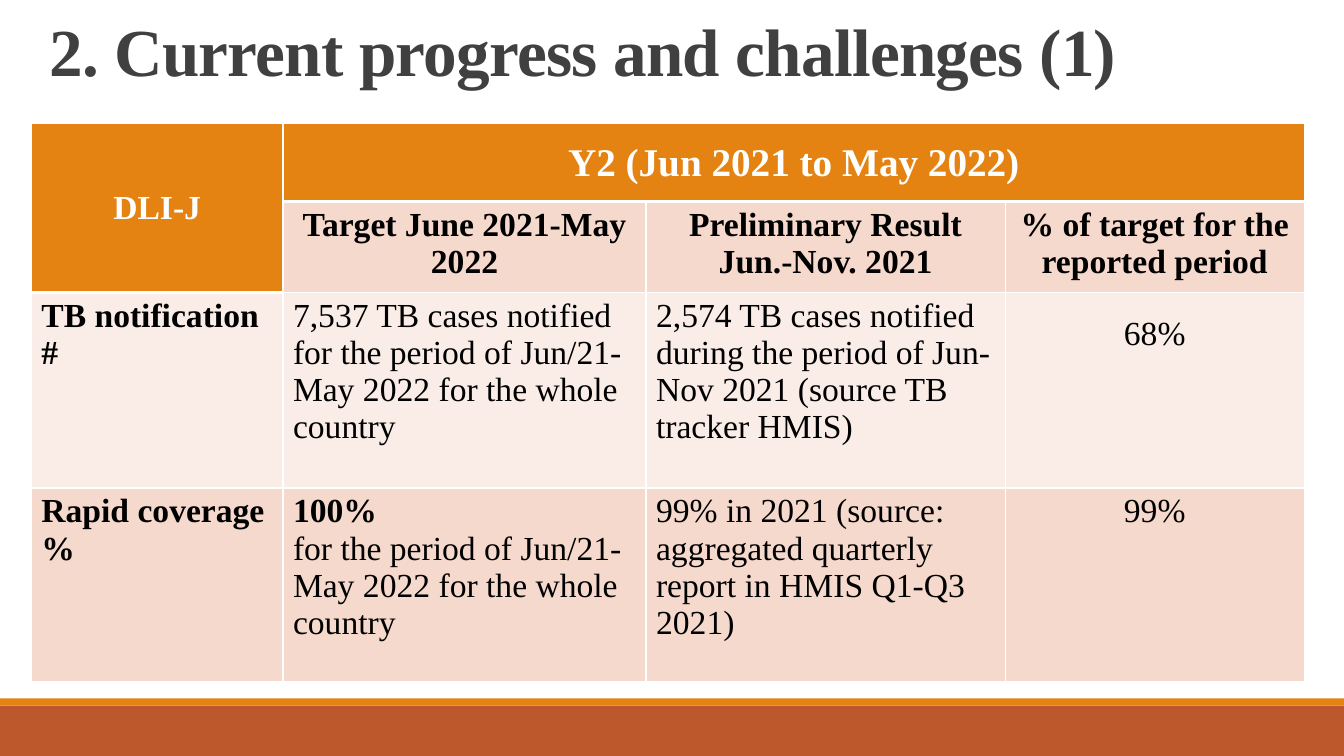
"""Build the slide on current progress and challenges with its results table."""
from lxml import etree
from pptx import Presentation
from pptx import util as u
from pptx.dml.color import RGBColor
from pptx.enum import shapes, text
from pptx.oxml import ns

ORANGE = RGBColor(0xE4, 0x83, 0x12)
RUST = RGBColor(0xBD, 0x58, 0x2C)
PEACH = RGBColor(0xF5, 0xD9, 0xCC)
PALE = RGBColor(0xFA, 0xED, 0xE7)
WHITE = RGBColor(0xFF, 0xFF, 0xFF)
BLACK = RGBColor(0, 0, 0)
GREY = RGBColor(0x40, 0x40, 0x40)
FONT = "Times New Roman"
COLUMN_WIDTHS = [6.34, 9.15, 9.05, 7.54]
ROW_HEIGHTS = [1.96, 1.45, 4.93, 4.88]
ROW_FILLS = [ORANGE, PEACH, PALE, PEACH]
ROWS = [
    ["DLI-J", "Y2 (Jun 2021 to May 2022)", "", ""],
    ["", "Target June 2021-May 2022", "Preliminary Result Jun.-Nov. 2021",
     "% of target for the reported period"],
    ["TB notification\n#",
     "7,537 TB cases notified for the period of Jun/21-May 2022 for the whole country",
     "2,574 TB cases notified during the period of Jun-Nov 2021 (source TB tracker HMIS)",
     "68%"],
    ["Rapid coverage %",
     "100%\nfor the period of Jun/21-May 2022 for the whole country",
     "99% in 2021 (source: aggregated quarterly report in HMIS Q1-Q3 2021)",
     "99%"],
]


def style_font(font, size, color, bold):
    font.name, font.size, font.bold = FONT, u.Pt(size), bold
    font.color.rgb = color


def add_borders(cell, bottom_width):
    properties = cell._tc.get_or_add_tcPr()
    widths = {"lnL": 1, "lnR": 1, "lnT": 1, "lnB": bottom_width}
    for position, (tag, width) in enumerate(widths.items()):
        line = etree.Element(ns.qn(f"a:{tag}"), w=str(u.Pt(width)))
        fill = etree.SubElement(line, ns.qn("a:solidFill"))
        etree.SubElement(fill, ns.qn("a:srgbClr"), val=str(WHITE))
        properties.insert(position, line)


presentation = Presentation()
presentation.slide_width = u.Cm(33.87)
presentation.slide_height = u.Cm(19.05)
slide = presentation.slides.add_slide(presentation.slide_layouts[6])

for top, height, color in [(17.78, 1.27, RUST), (17.6, 0.18, ORANGE)]:
    band = slide.shapes.add_shape(shapes.MSO_SHAPE.RECTANGLE, 0, u.Cm(top),
                                  presentation.slide_width, u.Cm(height))
    band.shadow.inherit = False
    band.fill.solid()
    band.fill.fore_color.rgb = color
    band.line.fill.background()

title = slide.shapes.add_textbox(u.Cm(0.99), u.Cm(0.38), u.Cm(31.65), u.Cm(2.08))
title.text_frame.word_wrap = True
title.text_frame.vertical_anchor = text.MSO_ANCHOR.MIDDLE
title.text_frame.text = "2. Current progress and challenges (1)"
paragraph = title.text_frame.paragraphs[0]
paragraph.line_spacing = 0.85
style_font(paragraph.runs[0].font, 48, GREY, True)
paragraph.runs[0]._r.get_or_add_rPr().set("spc", "-50")

table = slide.shapes.add_table(len(ROWS), len(COLUMN_WIDTHS), u.Cm(0.79), u.Cm(3.12),
                               u.Cm(sum(COLUMN_WIDTHS)), u.Cm(sum(ROW_HEIGHTS))).table
for column, width in zip(table.columns, COLUMN_WIDTHS):
    column.width = u.Cm(width)
for row, height in zip(table.rows, ROW_HEIGHTS):
    row.height = u.Cm(height)
table.cell(0, 0).merge(table.cell(1, 0))
table.cell(0, 1).merge(table.cell(0, 3))

for row_index, contents in enumerate(ROWS):
    for column_index, content in enumerate(contents):
        cell = table.cell(row_index, column_index)
        is_header = row_index == 0 or (row_index, column_index) == (1, 0)
        cell.fill.solid()
        cell.fill.fore_color.rgb = ORANGE if is_header else ROW_FILLS[row_index]
        add_borders(cell, 3 if is_header else 1)
        if not content:
            continue
        cell.text_frame.text = content
        if is_header:
            cell.vertical_anchor = text.MSO_ANCHOR.MIDDLE
        for paragraph in cell.text_frame.paragraphs:
            if row_index < 2 or column_index == 3:
                paragraph.alignment = text.PP_ALIGN.CENTER
            if paragraph.text == "68%":
                paragraph.line_spacing = 1.5
            bold = row_index < 2 or column_index == 0 or paragraph.text == "100%"
            size = 28 if (row_index, column_index) == (0, 1) else 24
            style_font(paragraph.runs[0].font, size, WHITE if is_header else BLACK, bold)

presentation.save("out.pptx")
